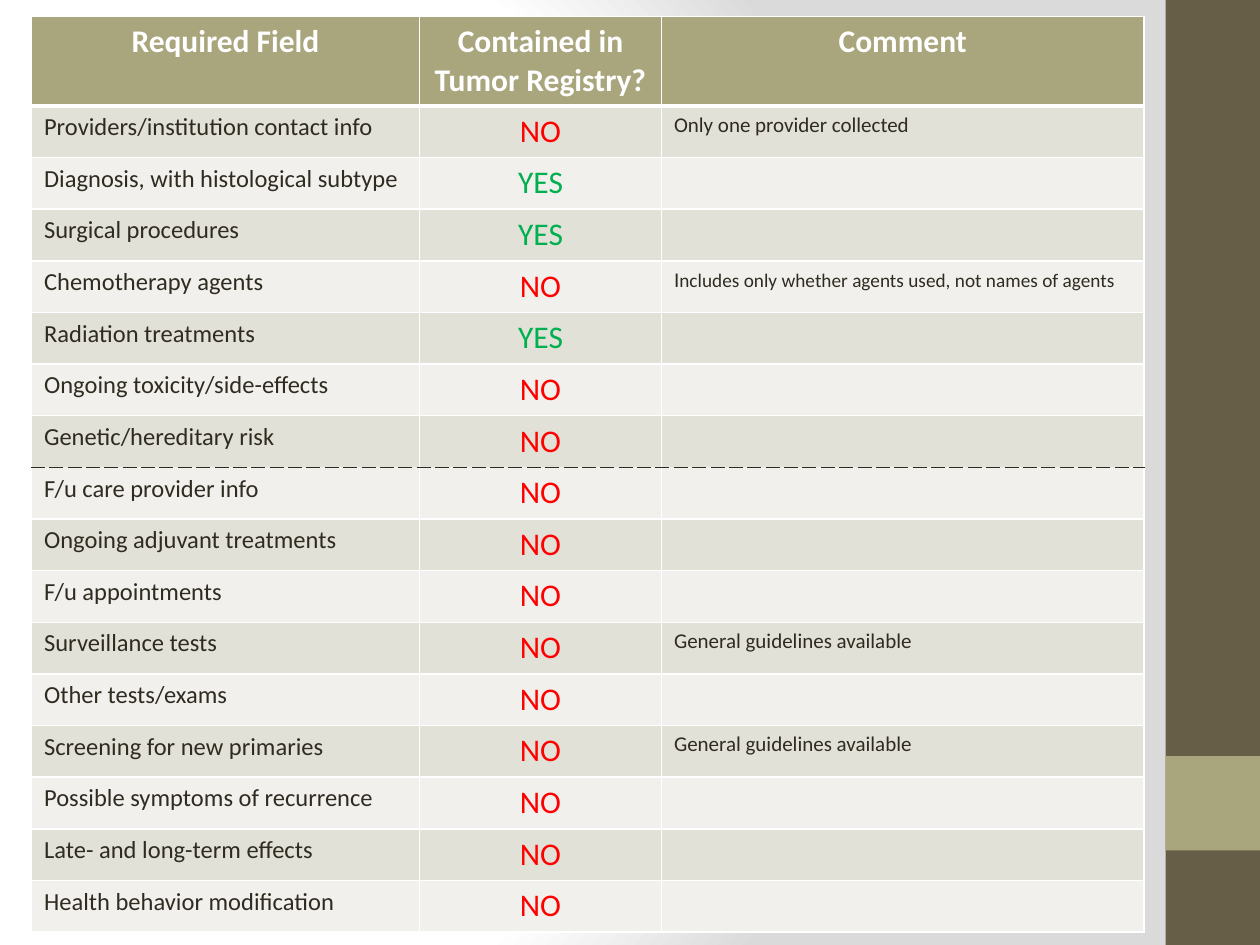
from pptx import Presentation
from pptx import util as u
from pptx.dml.color import RGBColor
from pptx.enum import shapes, text
from pptx.oxml import parse_xml
from pptx.oxml.ns import nsdecls

FONT = "Calibri"
WHITE, INK, OLIVE, BROWN = "FFFFFF", "2F2B20", "A9A57C", "675E47"
BANDS = ("E2E1D7", "F1F0EC")
ANSWER_COLORS = {"NO": "FF0000", "YES": "00B050"}
COLUMN_WIDTHS = (3.08, 1.92, 3.83)
HEADER_HEIGHT, ROW_HEIGHT = 0.71, 0.41
HEADERS = ("Required Field", "Contained in Tumor Registry?", "Comment")
DIVIDER_ROW = 7  # the dashed rule runs below this row

# Field, answer, comment as (text, size) runs
FIELDS = (
    ("Providers/institution contact info", "NO", [("Only one provider collected", 12)]),
    ("Diagnosis, with histological subtype", "YES", []),
    ("Surgical procedures", "YES", []),
    ("Chemotherapy agents", "NO",
     [("I", 12), ("ncludes only whether agents used, not names of agents", 11)]),
    ("Radiation treatments", "YES", []),
    ("Ongoing toxicity/side-effects", "NO", []),
    ("Genetic/hereditary risk", "NO", []),
    ("F/u care provider info", "NO", []),
    ("Ongoing adjuvant treatments", "NO", []),
    ("F/u appointments", "NO", []),
    ("Surveillance tests", "NO", [("General guidelines available", 12)]),
    ("Other tests/exams", "NO", []),
    ("Screening for new primaries", "NO", [("General guidelines available", 12)]),
    ("Possible symptoms of recurrence", "NO", []),
    ("Late- and long-term effects", "NO", []),
    ("Health behavior modification", "NO", []),
)


def rgb(color):
    return RGBColor.from_string(color)


def set_background(slide):
    """Radial gradient, white on the left and grey towards the right."""
    stops = "".join(
        f'<a:gs pos="{position * 1000}"><a:srgbClr val="{color}"/></a:gs>'
        for position, color in ((0, WHITE), (75, WHITE), (100, "DADADA")))
    background = parse_xml(
        f'<p:bg {nsdecls("p", "a")}><p:bgPr><a:gradFill rotWithShape="1">'
        f'<a:gsLst>{stops}</a:gsLst><a:path path="circle">'
        '<a:fillToRect l="20000" t="50000" r="100000" b="50000"/></a:path>'
        '</a:gradFill><a:effectLst/></p:bgPr></p:bg>')
    slide.element.cSld.insert(0, background)


def add_block(slide, top, height, color):
    block = slide.shapes.add_shape(
        shapes.MSO_SHAPE.RECTANGLE,
        u.Inches(9.25), u.Inches(top), u.Inches(0.75), u.Inches(height))
    block.shadow.inherit = False
    block.fill.solid()
    block.fill.fore_color.rgb = rgb(color)
    block.line.fill.background()


def set_borders(cell, top, bottom):
    """Top and bottom are (color, points, dash); the sides are thin white."""
    side = (WHITE, 1, "solid")
    borders = {"lnL": side, "lnR": side, "lnT": top, "lnB": bottom}
    properties = cell._tc.get_or_add_tcPr()
    for index, (tag, (color, width, dash)) in enumerate(borders.items()):
        properties.insert(index, parse_xml(
            f'<a:{tag} {nsdecls("a")} w="{u.Pt(width)}"><a:solidFill>'
            f'<a:srgbClr val="{color}"/></a:solidFill>'
            f'<a:prstDash val="{dash}"/></a:{tag}>'))


def fill_cell(cell, runs, color, fill, centered=False, bold=False):
    cell.fill.solid()
    cell.fill.fore_color.rgb = rgb(fill)
    paragraph = cell.text_frame.paragraphs[0]
    if centered:
        paragraph.alignment = text.PP_ALIGN.CENTER
    for words, size in runs:
        run = paragraph.add_run()
        run.text = words
        run.font.name = FONT
        run.font.size = u.Pt(size)
        run.font.bold = bold
        run.font.color.rgb = rgb(color)


def add_field_table(slide):
    row_count = len(FIELDS) + 1
    table = slide.shapes.add_table(
        row_count, len(HEADERS), u.Inches(0.25), u.Inches(0.13),
        u.Inches(sum(COLUMN_WIDTHS)),
        u.Inches(HEADER_HEIGHT + ROW_HEIGHT * len(FIELDS))).table
    for column, width in zip(table.columns, COLUMN_WIDTHS):
        column.width = u.Inches(width)
    for index, row in enumerate(table.rows):
        row.height = u.Inches(ROW_HEIGHT if index else HEADER_HEIGHT)

    for column, header in enumerate(HEADERS):
        fill_cell(table.cell(0, column), [(header, 18)], WHITE, OLIVE,
                  centered=True, bold=True)
    for row, (field, answer, comment) in enumerate(FIELDS, start=1):
        band = BANDS[(row - 1) % 2]
        fill_cell(table.cell(row, 0), [(field, 14)], INK, band)
        fill_cell(table.cell(row, 1), [(answer, 18)], ANSWER_COLORS[answer],
                  band, centered=True)
        fill_cell(table.cell(row, 2), comment, INK, band)

    rules = [(WHITE, 1, "solid")] * (row_count + 1)
    rules[1] = (WHITE, 3, "solid")
    rules[DIVIDER_ROW + 1] = (INK, 1, "dash")
    for row in range(row_count):
        for column in range(len(HEADERS)):
            set_borders(table.cell(row, column), rules[row], rules[row + 1])


def main():
    presentation = Presentation()
    presentation.slide_width = u.Inches(10)
    presentation.slide_height = u.Inches(7.5)
    slide = presentation.slides.add_slide(presentation.slide_layouts[6])
    set_background(slide)
    add_block(slide, 0, 7.5, BROWN)
    add_block(slide, 6, 0.75, OLIVE)
    add_field_table(slide)
    presentation.save("out.pptx")


if __name__ == "__main__":
    main()
